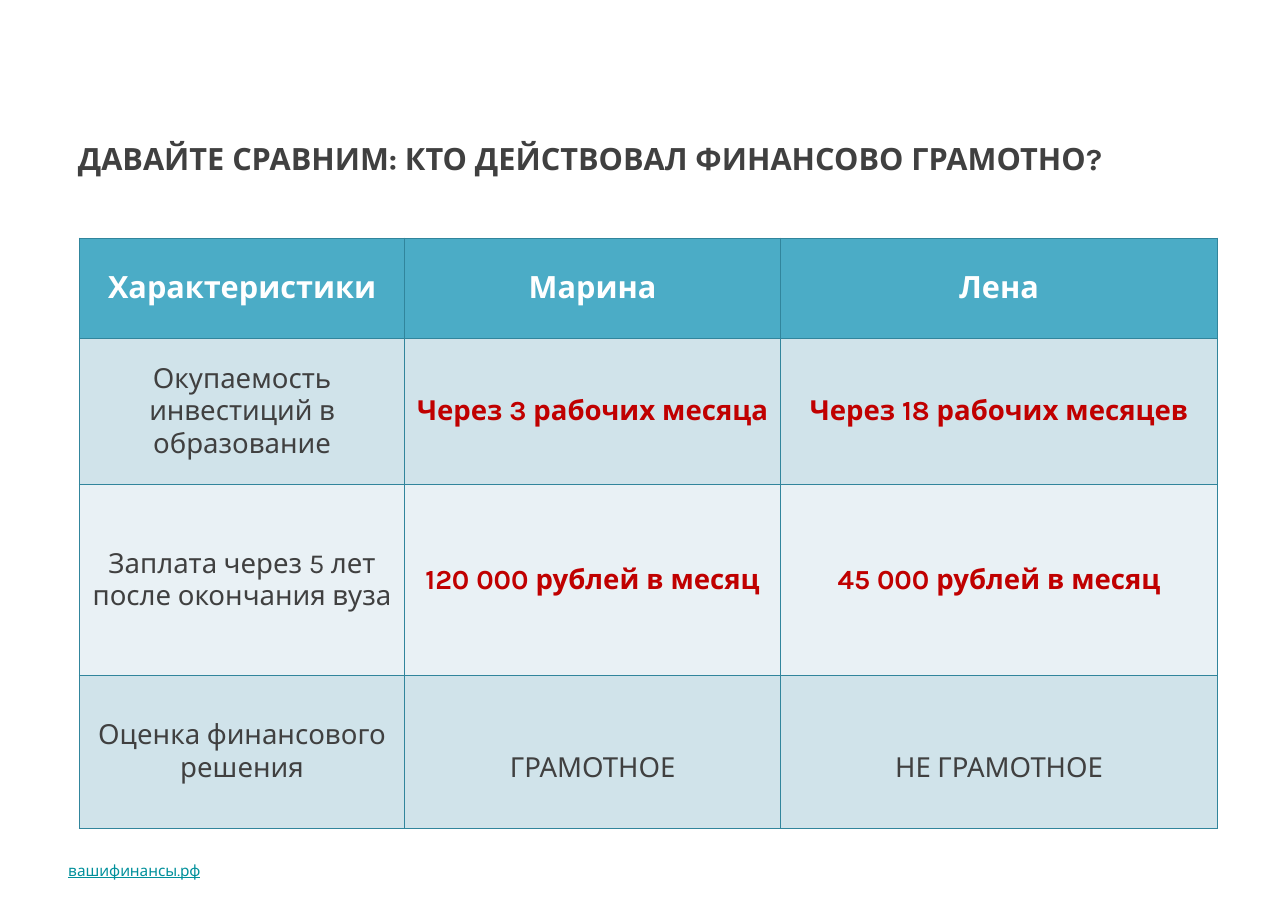
from lxml import etree
from pptx import Presentation
from pptx.dml.color import RGBColor
from pptx.enum import text
from pptx.oxml.ns import qn
from pptx.util import Pt

TITLE = "ДАВАЙТЕ СРАВНИМ: КТО ДЕЙСТВОВАЛ ФИНАНСОВО ГРАМОТНО?"
SITE = "вашифинансы.рф"
ROWS = [
    ("Характеристики", "Марина", "Лена"),
    ("Окупаемость инвестиций в образование",
     "Через 3 рабочих месяца", "Через 18 рабочих месяцев"),
    ("Заплата через 5 лет после окончания вуза",
     "120 000 рублей в месяц", "45 000 рублей в месяц"),
    ("Оценка финансового решения", "ГРАМОТНОЕ", "НЕ ГРАМОТНОЕ"),
]
COL_WIDTHS = (212.2, 245.6, 285.2)
ROW_HEIGHTS = (65.4, 95.3, 124.7, 99.8)
TABLE_LEFT, TABLE_TOP = 52, 155.6
VERDICT_DROP = 25  # top margin that lowers the two verdicts by half a line
FONT = "Karla"
COLORS = {
    "text": "404040", "accent": "C00000", "header_text": "FFFFFF",
    "header": "4BACC6", "band_dark": "D0E3EA", "band_light": "E9F1F5",
    "border": "31859C", "site": "00909B",
}


def rgb(name):
    return RGBColor.from_string(COLORS[name])


def write(tf, content, size, color, bold=False, align=text.PP_ALIGN.LEFT):
    tf.text = content
    p = tf.paragraphs[0]
    p.alignment = align
    font = p.runs[0].font
    font.name, font.size, font.bold = FONT, Pt(size), bold
    font.color.rgb = rgb(color)
    return font


def set_margins(tf, left=3.6):
    tf.margin_left = Pt(left)
    tf.margin_top = tf.margin_right = tf.margin_bottom = Pt(3.6)
    tf.word_wrap = True


def add_borders(cell):
    tc_pr = cell._tc.get_or_add_tcPr()
    for i, side in enumerate(("lnL", "lnR", "lnT", "lnB")):
        ln = etree.Element(qn(f"a:{side}"), w=str(Pt(1)))
        fill = etree.SubElement(ln, qn("a:solidFill"))
        etree.SubElement(fill, qn("a:srgbClr"), val=COLORS["border"])
        tc_pr.insert(i, ln)


def cell_style(row, col):
    """Return text size, text colour, bold and fill of a cell."""
    if row == 0:
        return 20, "header_text", True, "header"
    band = "band_dark" if row % 2 else "band_light"
    if col > 0 and row < len(ROWS) - 1:
        return 18, "accent", True, band
    return 18, "text", False, band


def add_comparison(slide):
    table = slide.shapes.add_table(
        len(ROWS), len(COL_WIDTHS), Pt(TABLE_LEFT), Pt(TABLE_TOP),
        Pt(sum(COL_WIDTHS)), Pt(sum(ROW_HEIGHTS))).table
    for column, width in zip(table.columns, COL_WIDTHS):
        column.width = Pt(width)
    for row, height in zip(table.rows, ROW_HEIGHTS):
        row.height = Pt(height)
    for r, row in enumerate(ROWS):
        for c, content in enumerate(row):
            cell = table.cell(r, c)
            size, color, bold, fill = cell_style(r, c)
            write(cell.text_frame, content, size, color, bold,
                  text.PP_ALIGN.CENTER)
            cell.vertical_anchor = text.MSO_ANCHOR.MIDDLE
            if r == len(ROWS) - 1 and c > 0:
                cell.margin_top = Pt(VERDICT_DROP)
            cell.fill.solid()
            cell.fill.fore_color.rgb = rgb(fill)
            add_borders(cell)


def main():
    prs = Presentation()
    prs.slide_width, prs.slide_height = Pt(841), Pt(594.7)
    slide = prs.slides.add_slide(prs.slide_layouts[5])

    title = slide.shapes.title
    title.left, title.top = Pt(41.8), Pt(87.8)
    title.width, title.height = Pt(757.4), Pt(69.1)
    tf = title.text_frame
    set_margins(tf, left=9)
    tf.vertical_anchor = text.MSO_ANCHOR.TOP
    tf.auto_size = text.MSO_AUTO_SIZE.NONE
    write(tf, TITLE, 20, "text", bold=True)

    add_comparison(slide)

    site = slide.shapes.add_textbox(Pt(41), Pt(558), Pt(285.8), Pt(20.2))
    tf = site.text_frame
    set_margins(tf)
    tf.vertical_anchor = text.MSO_ANCHOR.MIDDLE
    write(tf, SITE, 10, "site").underline = True

    prs.save("out.pptx")


if __name__ == "__main__":
    main()
